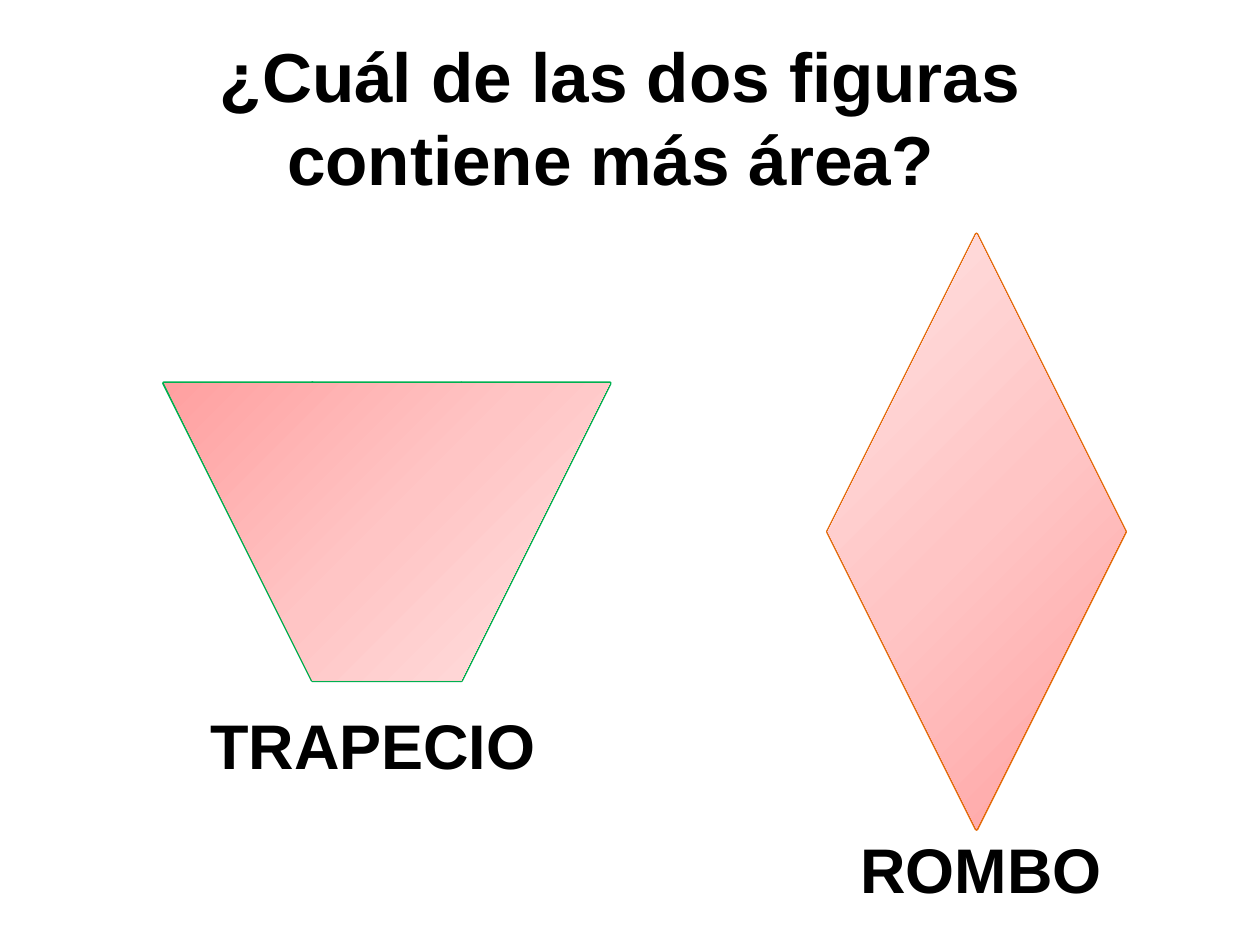
from copy import deepcopy
from dataclasses import dataclass

from pptx import Presentation
from pptx import util as u
from pptx.dml.color import RGBColor
from pptx.enum import shapes, text
from pptx.oxml.ns import qn

WIDTH, HEIGHT = 10, 7.5
UNIT = 1.18
COLORS = {"ink": "000000", "green": "00B050", "orange": "E46C0A",
          "deep": "FFA0A0", "middle": "FFC5C5", "pale": "FFE3E3"}
KIND = shapes.MSO_SHAPE


@dataclass(frozen=True)
class Triangle:
    column: int
    row: int
    turn: int = 0
    flip: bool = False


@dataclass(frozen=True)
class Figure:
    kind: KIND
    left: float
    top: float
    columns: int
    rows: int
    line: str
    triangles: tuple[Triangle, ...]
    turn: int = 0


@dataclass(frozen=True)
class Label:
    words: str
    left: float
    top: float
    width: float
    height: float
    size: float
    centred: bool = False


FIGURES = (
    Figure(KIND.TRAPEZOID, 1.3, 3.04, 3, 1, "green",
           (Triangle(2, 0, 180, True), Triangle(0, 0, 180),
            Triangle(1, 0, 180), Triangle(1, 0)), turn=180),
    Figure(KIND.DIAMOND, 6.57, 1.86, 2, 2, "orange",
           (Triangle(0, 1, 180), Triangle(1, 1, 180, True),
            Triangle(1, 0), Triangle(0, 0, flip=True))),
)
LABELS = (
    Label("¿Cuál de las dos figuras  contiene más área?  ",
          0.05, 0.04, 0.9, 1 / 6, 39.6, centred=True),
    Label("TRAPECIO", 0.157, 0.741, 0.3, 0.095, 36),
    Label("ROMBO", 0.673, 0.872, 0.3, 0.095, 36),
)


def color(name: str) -> RGBColor:
    return RGBColor.from_string(COLORS[name])


def add_block(page, figure: Figure, kind: KIND, column: int, row: int,
              columns: int, rows: int, turn: int):
    block = page.shapes.add_shape(
        kind, u.Inches(figure.left + column * UNIT),
        u.Inches(figure.top + row * 2 * UNIT),
        u.Inches(columns * UNIT), u.Inches(rows * 2 * UNIT))
    block.rotation = turn
    block.shadow.inherit = False
    return block


def shade(block) -> None:
    block.fill.gradient()
    block.fill.gradient_angle = 135
    stop_list = block._element.spPr.find(".//" + qn("a:gsLst"))
    stop_list.insert(1, deepcopy(stop_list[0]))
    for stop, name, position in zip(block.fill.gradient_stops,
                                    ("deep", "middle", "pale"), (0, 0.5, 1)):
        stop.color.rgb = color(name)
        stop.position = position


def draw_figure(page, figure: Figure) -> None:
    for part in figure.triangles:
        triangle = add_block(page, figure, KIND.RIGHT_TRIANGLE,
                             part.column, part.row, 1, 1, part.turn)
        triangle.fill.background()
        triangle.line.color.rgb = color(figure.line)
        triangle.line.width = u.Pt(2)
        if part.flip:
            triangle._element.spPr.find(qn("a:xfrm")).set("flipH", "1")
    whole = add_block(page, figure, figure.kind, 0, 0,
                      figure.columns, figure.rows, figure.turn)
    if figure.kind == KIND.TRAPEZOID:
        whole.adjustments[0] = 0.5
    shade(whole)
    whole.line.fill.background()


def draw_label(page, label: Label) -> None:
    box = page.shapes.add_textbox(
        u.Inches(label.left * WIDTH), u.Inches(label.top * HEIGHT),
        u.Inches(label.width * WIDTH), u.Inches(label.height * HEIGHT))
    frame = box.text_frame
    frame.word_wrap = True
    para = frame.paragraphs[0]
    if label.centred:
        frame.vertical_anchor = text.MSO_ANCHOR.MIDDLE
        para.alignment = text.PP_ALIGN.CENTER
    span = para.add_run()
    span.text = label.words
    span.font.name = "Arial"
    span.font.size = u.Pt(label.size)
    span.font.bold = True
    span.font.color.rgb = color("ink")


def main() -> None:
    """Build the slide comparing the areas of a trapezoid and a rhombus."""
    deck = Presentation()
    deck.slide_width, deck.slide_height = u.Inches(WIDTH), u.Inches(HEIGHT)
    page = deck.slides.add_slide(deck.slide_layouts[6])
    for figure in FIGURES:
        draw_figure(page, figure)
    for label in LABELS:
        draw_label(page, label)
    deck.save("out.pptx")


if __name__ == "__main__":
    main()
